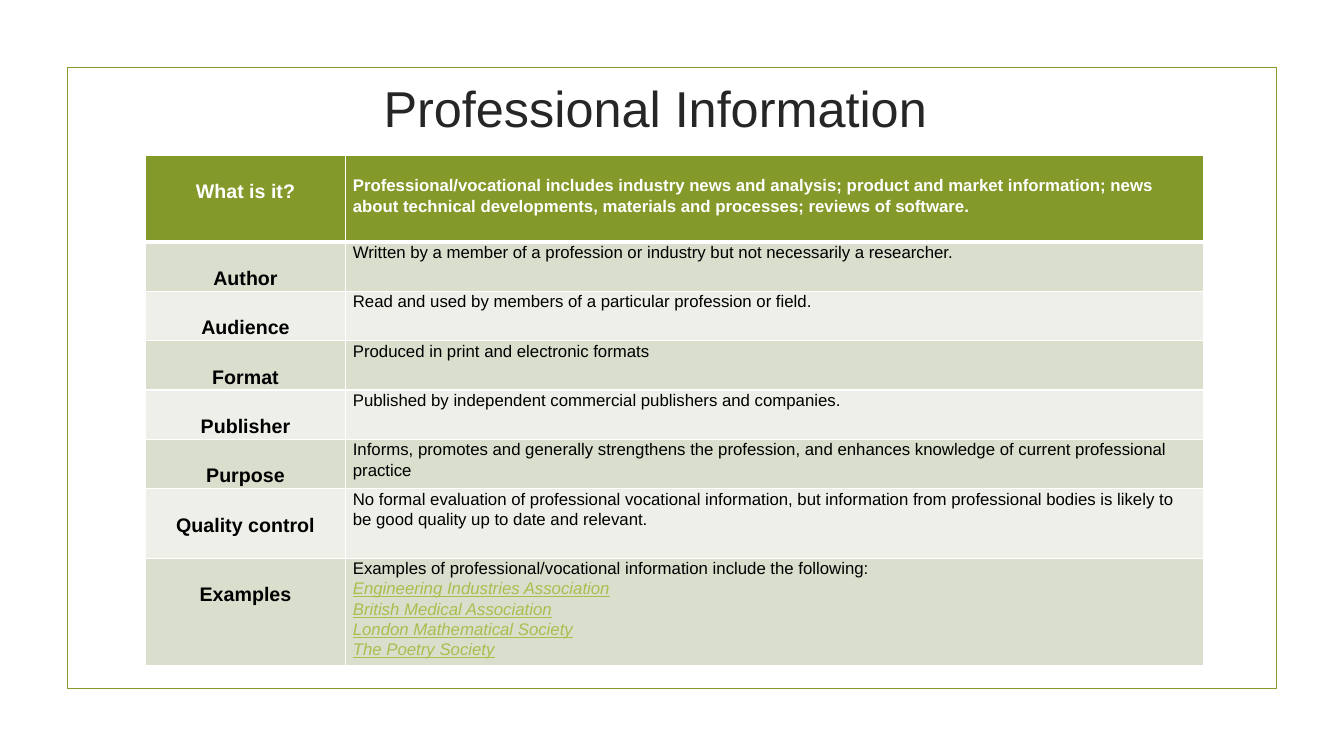
from dataclasses import dataclass
from lxml import etree
from pptx import Presentation
from pptx.dml.color import RGBColor
from pptx.enum import shapes, text
from pptx.oxml import ns
from pptx.util import Inches, Pt

# Content: label, then the lines beside it
TITLE = "Professional Information"
ROWS = [
    ("What is it?", ["Professional/vocational includes industry news and analysis; "
                     "product and market information; news about technical "
                     "developments, materials and processes; reviews of software."]),
    ("Author", ["Written by a member of a profession or industry but not "
                "necessarily a researcher."]),
    ("Audience", ["Read and used by members of a particular profession or field."]),
    ("Format", ["Produced in print and electronic formats"]),
    ("Publisher", ["Published by independent commercial publishers and companies."]),
    ("Purpose", ["Informs, promotes and generally strengthens the profession, and "
                 "enhances knowledge of current professional practice"]),
    ("Quality control", ["No formal evaluation of professional vocational information, "
                         "but information from professional bodies is likely to be "
                         "good quality up to date and relevant."]),
    ("Examples", ["Examples of professional/vocational information include the following:",
                  "Engineering Industries Association",
                  "British Medical Association",
                  "London Mathematical Society",
                  "The Poetry Society"]),
]


@dataclass(frozen=True)
class Theme:
    font: str = "Arial"
    green: str = "83992A"
    bands: tuple = ("EDEFE8", "D9DECD")
    white: str = "FFFFFF"
    ink: str = "000000"
    dark: str = "262626"
    link: str = "A8BF4D"
    title: int = 36
    label: int = 14
    body: int = 12
    lead: float = 1.07


T = Theme()
WIDE, HIGH = 13.33, 7.5
EDGE = 0.67
COLS = [1.99, 8.51]
TALL = [0.86] + [0.47] * 5 + [0.69, 1.04]
LEFT, TOP = 1.44, 1.54


def style(para, size, color, bold=False):
    font = para.font
    font.name, font.size, font.bold = T.font, Pt(size), bold
    font.color.rgb = RGBColor.from_string(color)


def border(cell, sides):
    props = cell._tc.get_or_add_tcPr()
    for i, (side, width) in enumerate(sides.items()):
        line = etree.Element(ns.qn(f"a:ln{side}"), w=str(Pt(width)))
        fill = etree.SubElement(line, ns.qn("a:solidFill"))
        etree.SubElement(fill, ns.qn("a:srgbClr"), val=T.white)
        props.insert(i, line)


def write(cell, lines, size, color, bold, align):
    cell.text = "\n".join(lines)
    for i, para in enumerate(cell.text_frame.paragraphs):
        style(para, size, T.link if i else color, bold)
        para.alignment, para.line_spacing = align, T.lead
        if i:
            para.font.italic = para.font.underline = True


deck = Presentation()
deck.slide_width, deck.slide_height = Inches(WIDE), Inches(HIGH)
slide = deck.slides.add_slide(deck.slide_layouts[6])

# Frame
frame = slide.shapes.add_shape(
    shapes.MSO_SHAPE.RECTANGLE, Inches(EDGE), Inches(EDGE),
    Inches(WIDE - 2 * EDGE), Inches(HIGH - 2 * EDGE))
frame.shadow.inherit = False
frame.fill.background()
frame.line.color.rgb = RGBColor.from_string(T.green)
frame.line.width = Pt(1.25)

# Title
head = slide.shapes.add_textbox(
    Inches(1.25), Inches(0.72), Inches(sum(COLS)), Inches(0.68)).text_frame
head.word_wrap = True
head.vertical_anchor = text.MSO_ANCHOR.MIDDLE
head.text = TITLE
style(head.paragraphs[0], T.title, T.dark)
head.paragraphs[0].alignment = text.PP_ALIGN.CENTER

# Table
table = slide.shapes.add_table(
    len(ROWS), len(COLS), Inches(LEFT), Inches(TOP),
    Inches(sum(COLS)), Inches(sum(TALL))).table
for col, width in zip(table.columns, COLS):
    col.width = Inches(width)
for r, (label, lines) in enumerate(ROWS):
    table.rows[r].height = Inches(TALL[r])
    first = r == 0
    color = T.white if first else T.ink
    fill = T.green if first else T.bands[r % 2]
    name, info = table.cell(r, 0), table.cell(r, 1)
    write(name, [label], T.label, color, True, text.PP_ALIGN.CENTER)
    write(info, lines, T.body, color, first, text.PP_ALIGN.LEFT)
    # Labels, and the heading's text, sit one line down
    for cell, side, drop in ((name, 0.08, 0.24), (info, 0.07, 0.2 if first else 0)):
        cell.margin_left = cell.margin_right = Inches(side)
        cell.margin_top, cell.margin_bottom = Inches(drop), 0
        cell.fill.solid()
        cell.fill.fore_color.rgb = RGBColor.from_string(fill)
        border(cell, {"L": 1, "R": 1, "T": 3 if r == 1 else 1, "B": 3 if first else 1})

deck.save("out.pptx")
